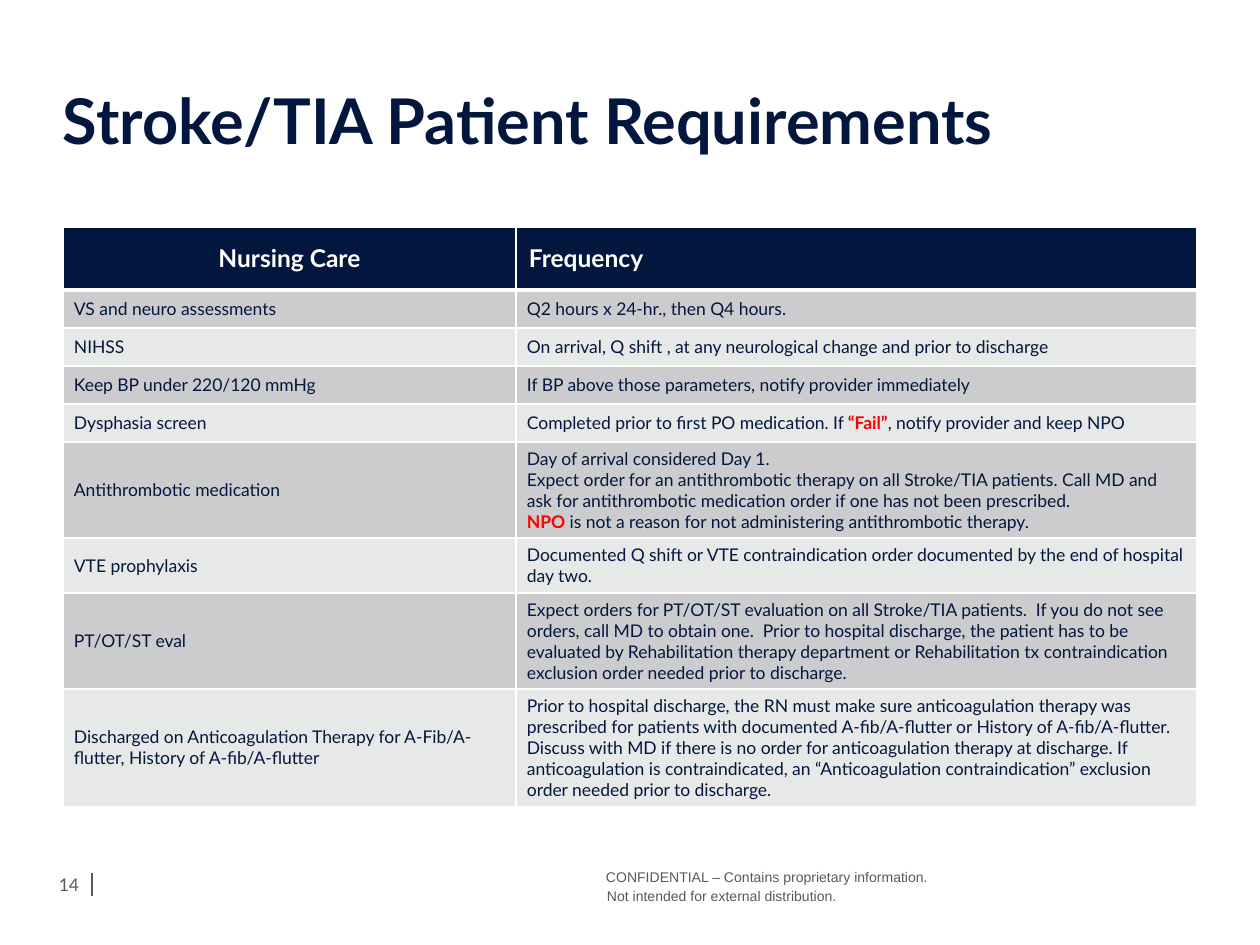
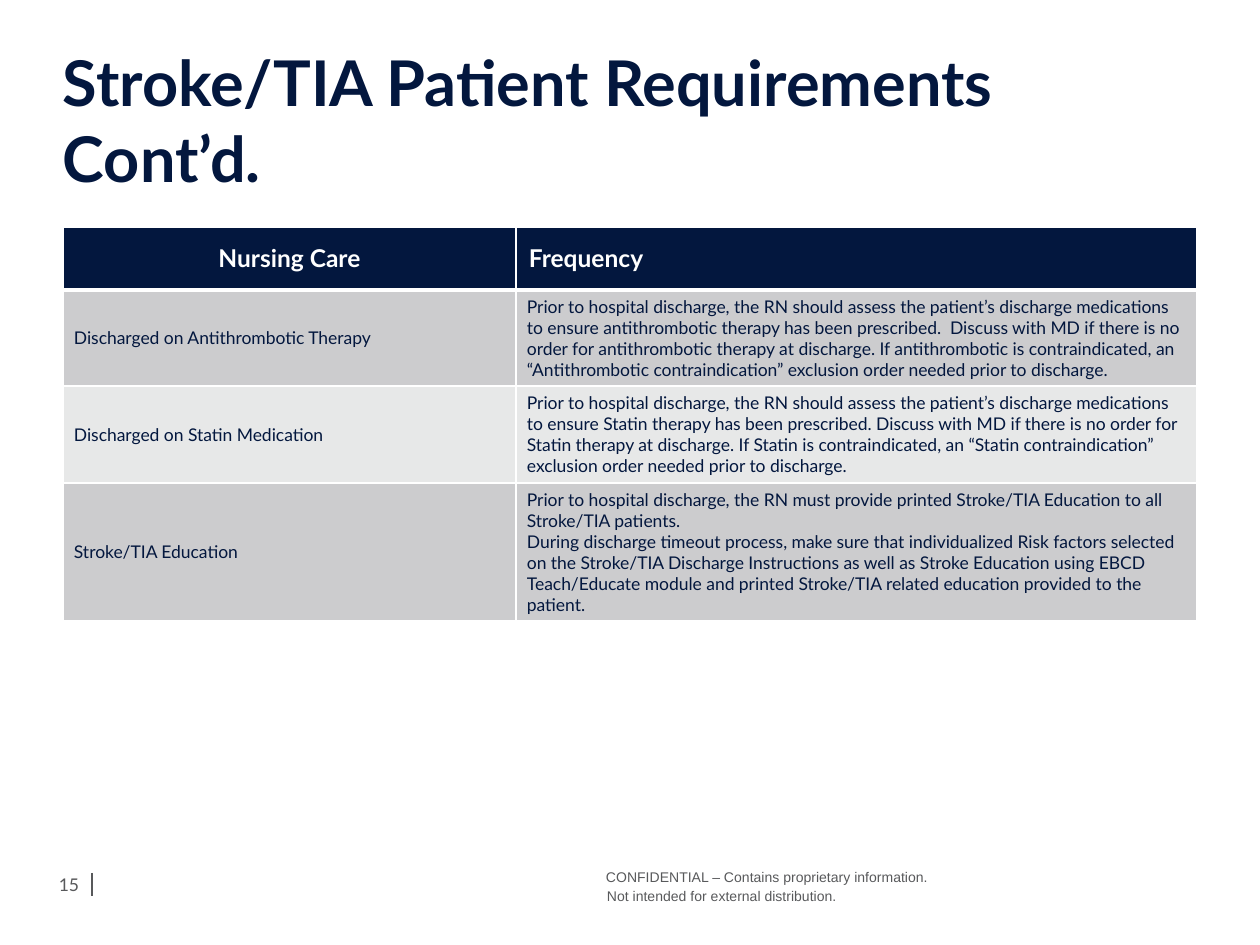
from lxml import etree
from pptx import Presentation
from pptx.dml.color import RGBColor
from pptx.enum import shapes, text
from pptx.oxml import ns
from pptx.util import Emu, Pt

NAVY, WHITE, GREY, RED = "03173E", "FFFFFF", "58595B", "FF0000"
BANDS = ["CCCCCE", "E7E8E8"]
MIDDLE = text.MSO_ANCHOR.MIDDLE
CONFIDENTIAL = "CONFIDENTIAL – Contains proprietary information. \nNot intended for external distribution."

pages = [
    (14, "Stroke/TIA Patient Requirements", [
        (38, "VS and neuro assessments", ["Q2 hours x 24-hr., then Q4 hours."]),
        (38, "NIHSS", ["On arrival, Q shift , at any neurological change and prior to discharge"]),
        (38, "Keep BP under 220/120 mmHg", ["If BP above those parameters, notify provider immediately"]),
        (38, "Dysphasia screen", [
            "Completed prior to first PO medication. If *“Fail”*, notify provider and keep NPO"]),
        (96, "Antithrombotic medication", [
            "Day of arrival considered Day 1.",
            "Expect order for an antithrombotic therapy on all Stroke/TIA patients. Call MD and "
            "ask for antithrombotic medication order if one has not been prescribed.",
            "*NPO* is not a reason for not administering antithrombotic therapy."]),
        (55, "VTE prophylaxis", [
            "Documented Q shift or VTE contraindication order documented by the end of hospital day two."]),
        (96, "PT/OT/ST eval", [
            "Expect orders for PT/OT/ST evaluation on all Stroke/TIA patients.  If you do not see "
            "orders, call MD to obtain one.  Prior to hospital discharge, the patient has to be "
            "evaluated by Rehabilitation therapy department or Rehabilitation tx contraindication "
            "exclusion order needed prior to discharge."]),
        (117, "Discharged on Anticoagulation Therapy for A-Fib/A-flutter, History of A-fib/A-flutter", [
            "Prior to hospital discharge, the RN must make sure anticoagulation therapy was "
            "prescribed for patients with documented A-fib/A-flutter or History of A-fib/A-flutter.  "
            "Discuss with MD if there is no order for anticoagulation therapy at discharge. If "
            "anticoagulation is contraindicated, an “Anticoagulation contraindication” exclusion "
            "order needed prior to discharge."]),
    ]),
    (15, "Stroke/TIA Patient Requirements Cont’d.", [
        (96, "Discharged on Antithrombotic Therapy", [
            "Prior to hospital discharge, the RN should assess the patient’s discharge medications "
            "to ensure antithrombotic therapy has been prescribed.  Discuss with MD if there is no "
            "order for antithrombotic therapy at discharge. If antithrombotic is contraindicated, an "
            "“Antithrombotic contraindication” exclusion order needed prior to discharge."]),
        (97, "Discharged on Statin Medication", [
            "Prior to hospital discharge, the RN should assess the patient’s discharge medications "
            "to ensure Statin therapy has been prescribed. Discuss with MD if there is no order for "
            "Statin therapy at discharge. If Statin is contraindicated, an “Statin contraindication” "
            "exclusion order needed prior to discharge."]),
        (138, "Stroke/TIA Education", [
            "Prior to hospital discharge, the RN must provide printed Stroke/TIA Education to all "
            "Stroke/TIA patients.",
            "During discharge timeout process, make sure that individualized Risk factors selected "
            "on the Stroke/TIA Discharge Instructions as well as Stroke Education using EBCD "
            "Teach/Educate module and printed Stroke/TIA related education provided to the patient."]),
    ]),
]


def px(count):
    return Emu(round(count * 914400 / 126))


def rgb(value):
    return RGBColor.from_string(value)


deck = Presentation()
deck.slide_width, deck.slide_height = px(1260), px(945)

for number, heading, care_rows in pages:
    slide = deck.slides.add_slide(deck.slide_layouts[6])

    divider = slide.shapes.add_connector(shapes.MSO_CONNECTOR.STRAIGHT, px(92), px(873), px(92), px(896))
    divider.line.color.rgb = rgb(GREY)
    divider.line.width = Pt(0.75)
    etree.SubElement(divider._element.spPr, ns.qn("a:effectLst"))

    for left, top, width, height, words, font, size, color, bold in [
        (45, 867, 34, 34, str(number), "Lato", 10, GREY, False),
        (606, 863, 422, 45, CONFIDENTIAL, "Arial", 8, GREY, False),
        (63, 45, 1134, 149, heading, "Lato", 36, NAVY, True),
    ]:
        frame = slide.shapes.add_textbox(px(left), px(top), px(width), px(height)).text_frame
        frame.word_wrap = True
        frame.vertical_anchor = MIDDLE
        frame.margin_left = frame.margin_right = frame.margin_top = frame.margin_bottom = 0
        line = frame.paragraphs[0]
        line.text = words
        if words == CONFIDENTIAL:
            line.line_spacing = 1.1
            line._p.get_or_add_pPr().set("marL", str(px(1)))
            line._p.get_or_add_pPr().set("indent", str(-px(1)))
        elif words == str(number):
            line.alignment = text.PP_ALIGN.RIGHT
        for run in line.runs:
            run.font.name, run.font.size, run.font.bold = font, Pt(size), bold
            run.font.color.rgb = rgb(color)

    all_rows = [(63, "Nursing Care", ["Frequency"])] + care_rows
    total = sum(row[0] for row in all_rows)
    care = slide.shapes.add_table(len(all_rows), 2, px(63), px(227), px(1134), px(total)).table
    care.horz_banding = False
    care.columns[0].width, care.columns[1].width = px(453), px(681)

    for r, (height, topic, frequency) in enumerate(all_rows):
        care.rows[r].height = px(height)
        header = r == 0
        for c, lines in enumerate([[topic], frequency]):
            cell = care.cell(r, c)
            cell.vertical_anchor = MIDDLE
            cell.margin_left = cell.margin_right = px(13 if header else 11)
            cell.margin_top = cell.margin_bottom = px(6)
            for side in "LRTB":
                thick = (r, side) in [(0, "B"), (1, "T")]
                edge = etree.SubElement(cell._tc.get_or_add_tcPr(), ns.qn("a:ln" + side),
                                        w=str(Pt(3 if thick else 1)))
                edge_fill = etree.SubElement(edge, ns.qn("a:solidFill"))
                etree.SubElement(edge_fill, ns.qn("a:srgbClr"), val=WHITE)
            cell.fill.solid()
            cell.fill.fore_color.rgb = rgb(NAVY if header else BANDS[(r - 1) % 2])

            cell.text_frame.text = "\n".join([""] * len(lines))
            for line, words in zip(cell.text_frame.paragraphs, lines):
                if header and c == 0:
                    line.alignment = text.PP_ALIGN.CENTER
                for part, piece in enumerate(words.split("*")):
                    if not piece:
                        continue
                    alert = part % 2 == 1
                    run = line.add_run()
                    run.text = piece
                    run.font.name = "Lato"
                    run.font.size = Pt(14 if header else 10)
                    run.font.bold = header or alert
                    run.font.color.rgb = rgb(WHITE if header else RED if alert else NAVY)

deck.save("out.pptx")
